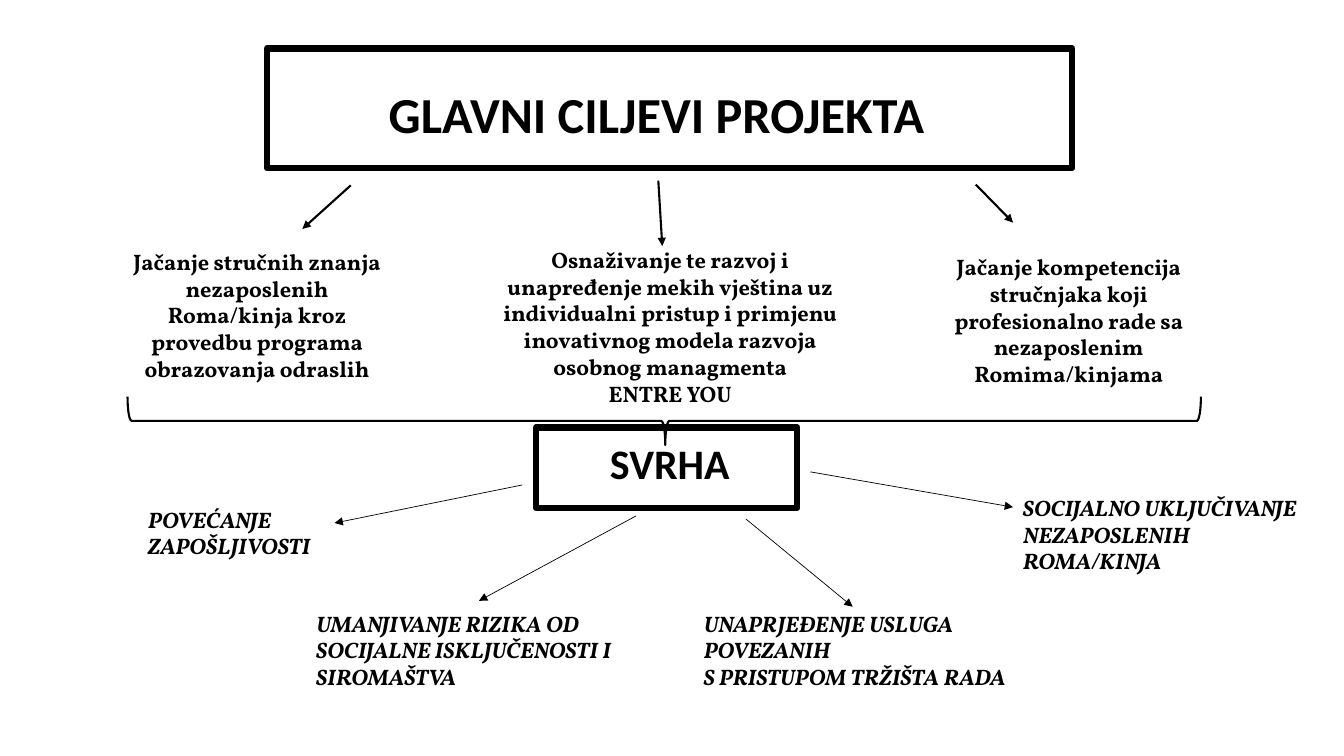
import pptx
import pptx.dml.color
import pptx.enum.dml
import pptx.enum.shapes
import pptx.enum.text
import pptx.oxml
import pptx.oxml.ns
import pptx.util

Cm = pptx.util.Cm
Pt = pptx.util.Pt
Shapes = pptx.enum.shapes.MSO_SHAPE
Align = pptx.enum.text.PP_ALIGN
BLACK = pptx.dml.color.RGBColor(0, 0, 0)


class Diagram:
    heading_font = "Calibri"
    body_font = "Vollkorn"
    body_size = 16
    ink = BLACK

    def __init__(self, slide):
        self.shapes = slide.shapes

    def text(self, place, paragraphs, font, size, align, italic=False):
        box = self.shapes.add_textbox(*map(Cm, place))
        frame = box.text_frame
        frame.word_wrap = True
        frame.auto_size = pptx.enum.text.MSO_AUTO_SIZE.SHAPE_TO_FIT_TEXT
        for index, words in enumerate(paragraphs):
            paragraph = frame.add_paragraph() if index else frame.paragraphs[0]
            paragraph.alignment = align
            run = paragraph.add_run()
            run.text = words
            run.font.name = font
            run.font.size = Pt(size)
            run.font.bold = True
            run.font.italic = italic
            run.font.color.rgb = self.ink

    def heading(self, place, words, size):
        self.text(place, [words], self.heading_font, size, Align.CENTER)

    def goal(self, place, paragraphs):
        self.text(place, paragraphs, self.body_font, self.body_size, Align.CENTER)

    def purpose(self, place, paragraphs):
        self.text(place, paragraphs, self.body_font, self.body_size, Align.LEFT, True)

    def outline(self, kind, place, weight):
        shape = self.shapes.add_shape(kind, *map(Cm, place))
        shape.shadow.inherit = False
        shape.fill.background()
        shape.line.color.rgb = self.ink
        shape.line.width = Pt(weight)
        return shape

    def frame(self, place):
        self.outline(Shapes.FLOWCHART_PROCESS, place, 4.5)

    def brace(self, place):
        brace = self.outline(Shapes.LEFT_BRACE, place, 1.5)
        brace.rotation = 270
        brace.adjustments[0] = 0.083
        brace.adjustments[1] = 0.501

    def arrow(self, ends, weight):
        arrow = self.shapes.add_connector(
            pptx.enum.shapes.MSO_CONNECTOR.STRAIGHT, *map(Cm, ends))
        arrow.line.color.rgb = self.ink
        arrow.line.width = Pt(weight)
        qn = pptx.oxml.ns.qn
        properties = arrow.element.find(qn("p:spPr"))
        head = properties.find(qn("a:ln")).makeelement(qn("a:tailEnd"), {"type": "triangle"})
        properties.find(qn("a:ln")).append(head)
        properties.append(properties.makeelement(qn("a:effectLst"), {}))


GOALS = [
    ((2.95, 6.12, 7.06, 3.68), (8.84, 4.67, 7.62, 5.77),
     ["Jačanje stručnih znanja nezaposlenih Roma/kinja kroz provedbu programa "
      "obrazovanja odraslih"]),
    ((12.19, 6.07, 9.4, 4.37), (16.59, 4.55, 16.69, 6.2),
     ["Osnaživanje te razvoj i unapređenje mekih vještina uz individualni pristup "
      "i primjenu inovativnog modela razvoja osobnog managmenta", "ENTRE YOU"]),
    ((22.86, 6.25, 8.15, 3.68), (24.59, 4.65, 25.53, 5.61),
     ["Jačanje kompetencija stručnjaka koji profesionalno rade sa nezaposlenim "
      "Romima/kinjama"]),
]
PURPOSES = [
    ((3.48, 12.62, 7.72, 1.63), (13.16, 12.22, 8.43, 13.18),
     ["POVEĆANJE ZAPOŠLJIVOSTI"]),
    ((7.72, 15.24, 9.17, 2.31), (16.03, 13, 12.07, 15.14),
     ["UMANJIVANJE RIZIKA OD SOCIJALNE ISKLJUČENOSTI I SIROMAŠTVA"]),
    ((17.48, 15.24, 9.47, 2.31), (18.8, 13.08, 21.49, 15.29),
     ["UNAPRJEĐENJE USLUGA POVEZANIH", "S PRISTUPOM TRŽIŠTA RADA"]),
    ((25.53, 12.32, 7.9, 2.31), (20.42, 11.89, 25.53, 12.78),
     ["SOCIJALNO UKLJUČIVANJE NEZAPOSLENIH ROMA/KINJA"]),
]


def main():
    deck = pptx.Presentation()
    deck.slide_width = Cm(33.87)
    deck.slide_height = Cm(19.05)
    diagram = Diagram(deck.slides.add_slide(deck.slide_layouts[6]))

    diagram.heading((6.15, 1.96, 20.8, 1.8), "GLAVNI CILJEVI PROJEKTA", 36)
    for place, ends, paragraphs in GOALS:
        diagram.arrow(ends, 1.5)
        diagram.goal(place, paragraphs)
    diagram.brace((16.13, -2.92, 1.22, 27.05))
    diagram.heading((14.96, 10.9, 3.84, 1.55), "SVRHA", 30)
    for place, ends, paragraphs in PURPOSES:
        diagram.purpose(place, paragraphs)
        diagram.arrow(ends, 0.5)
    diagram.frame((6.73, 1.22, 20.29, 3.02))
    diagram.frame((13.51, 10.77, 6.58, 2.03))
    deck.save("out.pptx")


if __name__ == "__main__":
    main()
